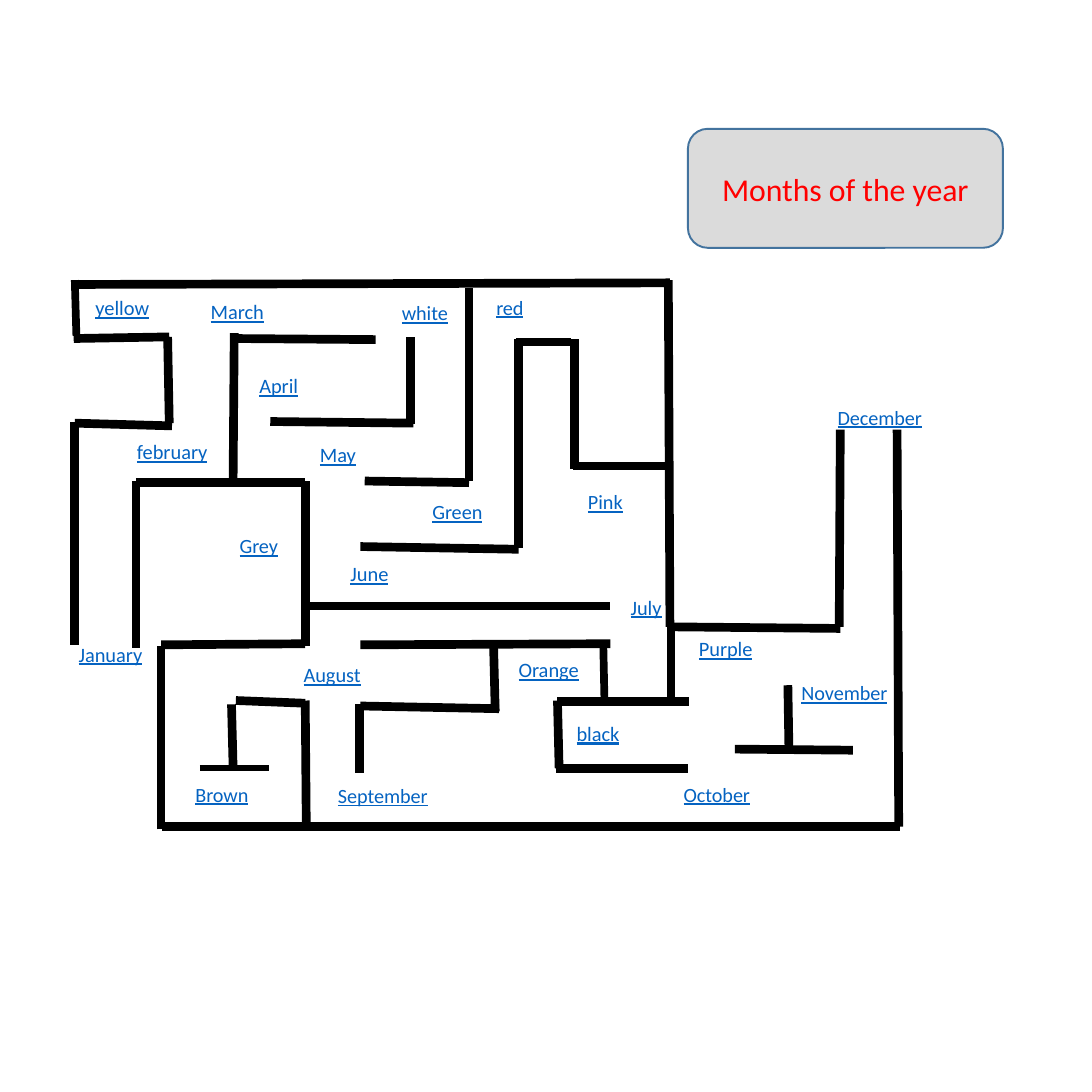
from dataclasses import dataclass

import pptx
import pptx.dml.color
import pptx.enum.shapes
import pptx.enum.text
import pptx.oxml.ns
import pptx.shapes.base
import pptx.slide
import pptx.text.text
import pptx.util
from lxml import etree
from pptx.util import Cm


@dataclass(frozen=True)
class Theme:
    font: str = "Calibri"
    wall: str = "000000"
    label: str = "0563C1"
    title: str = "FF0000"
    title_fill: str = "DBDBDB"
    title_border: str = "43739E"
    title_size: float = 16.5
    label_size: float = 10.5
    path_label_size: float = 10.6


THEME = Theme()


@dataclass(frozen=True)
class Wall:
    """A maze wall from (x1, y1) to (x2, y2) in cm, with its thickness in points."""
    x1: float
    y1: float
    x2: float
    y2: float
    thickness: float = 4.5


@dataclass(frozen=True)
class Label:
    """A word in the maze, placed in cm."""
    text: str
    left: float
    top: float
    width: float
    size: float = THEME.label_size
    wrap: bool = True


LABEL_HEIGHT = 0.71

WALLS = (
    # Upper left
    Wall(1.37, 5.21, 12.27, 5.18),
    Wall(1.37, 5.13, 1.4, 6.15, 4),
    Wall(1.35, 6.2, 3.1, 6.17),
    Wall(3.07, 6.17, 3.1, 7.75),
    Wall(1.37, 7.75, 3.15, 7.8),
    Wall(1.37, 11.81, 1.37, 7.72),
    Wall(2.49, 11.86, 2.49, 8.81),
    Wall(2.49, 8.84, 5.59, 8.84),
    Wall(4.29, 6.1, 4.27, 8.84),
    Wall(4.27, 6.2, 6.88, 6.22),
    Wall(4.95, 7.72, 7.57, 7.75),
    Wall(7.52, 7.77, 7.52, 6.17),
    # Upper right
    Wall(8.59, 8.81, 8.59, 5.28),
    Wall(6.68, 8.81, 8.59, 8.84),
    Wall(6.6, 10.01, 9.5, 10.06),
    Wall(9.5, 10.03, 9.5, 6.2),
    Wall(9.45, 6.27, 10.46, 6.27, 4),
    Wall(10.52, 8.59, 10.52, 6.2),
    Wall(10.49, 8.53, 12.24, 8.53, 4),
    Wall(12.27, 11.48, 12.24, 5.13),
    # Middle
    Wall(5.59, 11.84, 5.59, 8.81),
    Wall(5.64, 11.1, 11.18, 11.1),
    Wall(6.6, 11.81, 11.18, 11.79),
    Wall(2.95, 11.81, 5.59, 11.79),
    # Lower left
    Wall(2.95, 15.19, 2.95, 11.84),
    Wall(4.32, 12.83, 5.59, 12.88),
    Wall(4.24, 12.9, 4.27, 14.05),
    Wall(3.66, 14.07, 4.93, 14.07, 3),
    Wall(5.59, 12.83, 5.61, 15.19),
    Wall(6.58, 12.9, 6.58, 14.15),
    Wall(6.6, 12.93, 9.14, 12.98),
    Wall(9.04, 11.79, 9.07, 13.03),
    Wall(2.97, 15.14, 16.48, 15.14),
    # Lower right
    Wall(11.05, 11.84, 11.07, 12.8, 4),
    Wall(10.21, 12.85, 12.62, 12.85),
    Wall(10.21, 12.83, 10.24, 14.07),
    Wall(10.19, 14.07, 12.6, 14.07),
    Wall(12.29, 12.9, 12.29, 11.51),
    Wall(12.22, 11.48, 15.39, 11.51),
    Wall(15.37, 11.48, 15.39, 7.87),
    Wall(16.46, 15.14, 16.43, 7.87),
    Wall(14.43, 12.55, 14.45, 13.77),
    Wall(13.46, 13.72, 15.62, 13.74),
)

LABELS = (
    Label("January", 1.19, 11.63, 1.75, THEME.path_label_size),
    Label("february", 2.26, 7.92, 1.83, THEME.path_label_size),
    Label("March", 3.61, 5.36, 1.57, THEME.path_label_size),
    Label("April", 4.5, 6.71, 1.42, THEME.path_label_size),
    Label("May", 5.61, 7.98, 1.35, THEME.path_label_size),
    Label("June", 6.17, 10.16, 1.35, THEME.path_label_size),
    Label("July", 11.3, 10.77, 1.91, THEME.path_label_size),
    Label("August", 5.31, 12.01, 1.68, THEME.path_label_size),
    Label("September", 5.94, 14.22, 2.57),
    Label("October", 12.27, 14.2, 1.91),
    Label("November", 14.43, 12.34, 2.44),
    Label("December", 15.09, 7.29, 2.13),
    Label("yellow", 1.5, 5.28, 1.65, THEME.path_label_size),
    Label("Orange", 9.25, 11.91, 1.85, THEME.path_label_size),
    Label("black", 10.31, 13.08, 1.42, THEME.path_label_size),
    Label("Purple", 12.55, 11.53, 1.73, THEME.path_label_size),
    Label("red", 8.84, 5.28, 1.47),
    Label("Green", 7.67, 9.02, 1.52),
    Label("Pink", 10.52, 8.84, 1.14, wrap=False),
    Label("white", 7.11, 5.38, 1.37, wrap=False),
    Label("Brown", 3.33, 14.2, 1.5, wrap=False),
    Label("Grey", 4.14, 9.65, 1.24, wrap=False),
)


def rgb(value: str) -> pptx.dml.color.RGBColor:
    return pptx.dml.color.RGBColor.from_string(value)


def write_text(frame: pptx.text.text.TextFrame, text: str, *, size: float, color: str,
               underline: bool = False, wrap: bool = True,
               align: pptx.enum.text.PP_ALIGN = pptx.enum.text.PP_ALIGN.LEFT,
               anchor: pptx.enum.text.MSO_ANCHOR = pptx.enum.text.MSO_ANCHOR.TOP) -> None:
    frame.word_wrap = wrap
    frame.vertical_anchor = anchor
    para = frame.paragraphs[0]
    para.alignment = align
    span = para.add_run()
    span.text = text
    span.font.name = THEME.font
    span.font.size = pptx.util.Pt(size)
    span.font.underline = underline
    span.font.color.rgb = rgb(color)


def draw_walls(page: pptx.slide.Slide, walls: tuple[Wall, ...]) -> None:
    maze = page.shapes.add_group_shape()
    for wall in walls:
        line = maze.shapes.add_connector(
            pptx.enum.shapes.MSO_CONNECTOR.STRAIGHT,
            Cm(wall.x1), Cm(wall.y1), Cm(wall.x2), Cm(wall.y2))
        line.line.color.rgb = rgb(THEME.wall)
        line.line.width = pptx.util.Pt(wall.thickness)
        etree.SubElement(line._element.spPr, pptx.oxml.ns.qn("a:effectLst"))


def draw_label(page: pptx.slide.Slide, label: Label) -> None:
    box = page.shapes.add_textbox(
        Cm(label.left), Cm(label.top), Cm(label.width), Cm(LABEL_HEIGHT))
    box.text_frame.auto_size = pptx.enum.text.MSO_AUTO_SIZE.SHAPE_TO_FIT_TEXT
    write_text(box.text_frame, label.text, size=label.size, color=THEME.label,
               underline=True, wrap=label.wrap)


def draw_title(page: pptx.slide.Slide, text: str) -> None:
    box = page.shapes.add_shape(
        pptx.enum.shapes.MSO_SHAPE.ROUNDED_RECTANGLE,
        Cm(12.6), Cm(2.36), Cm(5.77), Cm(2.18))
    box.shadow.inherit = False
    box.fill.solid()
    box.fill.fore_color.rgb = rgb(THEME.title_fill)
    box.line.color.rgb = rgb(THEME.title_border)
    box.line.width = pptx.util.Pt(1)
    write_text(box.text_frame, text, size=THEME.title_size, color=THEME.title,
               align=pptx.enum.text.PP_ALIGN.CENTER,
               anchor=pptx.enum.text.MSO_ANCHOR.MIDDLE)


def main() -> None:
    deck = pptx.Presentation()
    deck.slide_width = deck.slide_height = Cm(20)
    page = deck.slides.add_slide(deck.slide_layouts[6])
    draw_walls(page, WALLS)
    for label in LABELS:
        draw_label(page, label)
    draw_title(page, "Months of the year")
    deck.save("out.pptx")


if __name__ == "__main__":
    main()
